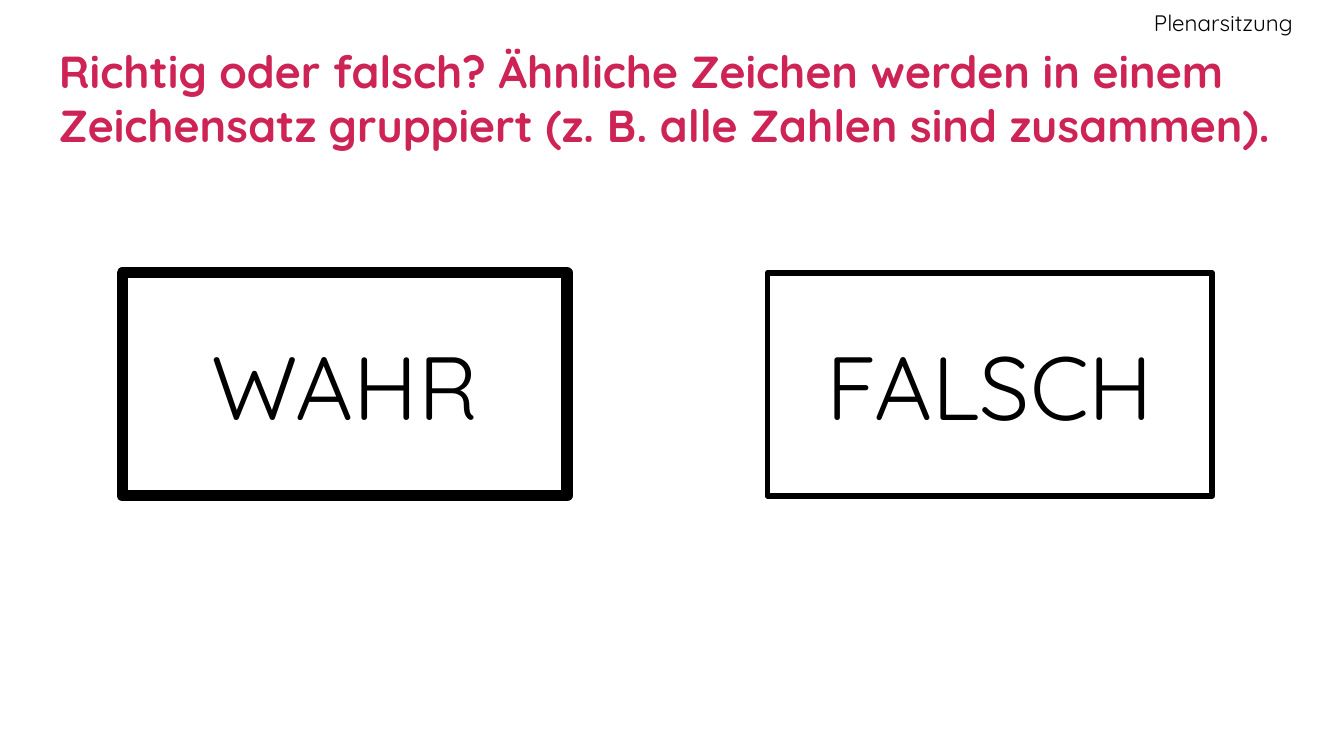
import pptx
import pptx.dml.color
import pptx.enum.shapes
import pptx.enum.text
import pptx.oxml.ns
import pptx.util
from lxml import etree

Pt = pptx.util.Pt
ALIGN = pptx.enum.text.PP_ALIGN
FONT = "Quicksand"
BLACK = "000000"
WHITE = "FFFFFF"
CRIMSON = "CD2355"

ANSWER_TOP, ANSWER_WIDTH, ANSWER_HEIGHT = 146.2, 238.3, 119.5
FIRST_ANSWER_LEFT, ANSWER_STEP = 65.5, 345.6
ANSWERS = [("WAHR", 6), ("FALSCH", 3)]


def color(hex_string):
    return pptx.dml.color.RGBColor.from_string(hex_string)


def write_text(shape, text, size, hex_color=BLACK, bold=False,
               align=ALIGN.LEFT, insets=(7.2, 7.2, 7.2, 7.2)):
    """Fill a shape with one middle-anchored paragraph; insets run left, top, right, bottom."""
    frame = shape.text_frame
    frame.word_wrap = True
    frame.vertical_anchor = pptx.enum.text.MSO_ANCHOR.MIDDLE
    (frame.margin_left, frame.margin_top,
     frame.margin_right, frame.margin_bottom) = map(Pt, insets)
    paragraph = frame.paragraphs[0]
    paragraph.alignment = align
    run = paragraph.add_run()
    run.text = text
    run.font.name = FONT
    run.font.size = Pt(size)
    run.font.bold = bold
    run.font.color.rgb = color(hex_color)


def add_label(slide, left, top, width, height, text, **text_format):
    box = slide.shapes.add_textbox(Pt(left), Pt(top), Pt(width), Pt(height))
    write_text(box, text, **text_format)


def add_answer(slide, left, text, line_width):
    """Add an answer box with rounded outline corners."""
    shape = slide.shapes.add_shape(
        pptx.enum.shapes.MSO_SHAPE.RECTANGLE,
        Pt(left), Pt(ANSWER_TOP), Pt(ANSWER_WIDTH), Pt(ANSWER_HEIGHT))
    shape.shadow.inherit = False
    shape.fill.solid()
    shape.fill.fore_color.rgb = color(WHITE)
    shape.line.color.rgb = color(BLACK)
    shape.line.width = Pt(line_width)
    outline = shape._element.spPr.find(pptx.oxml.ns.qn("a:ln"))
    etree.SubElement(outline, pptx.oxml.ns.qn("a:round"))
    write_text(shape, text, size=48, align=ALIGN.CENTER, insets=(3.6,) * 4)


def main():
    presentation = pptx.Presentation()
    presentation.slide_width = Pt(720)
    presentation.slide_height = Pt(405)
    slide = presentation.slides.add_slide(presentation.slide_layouts[6])

    add_label(slide, 24.5, 24.5, 671, 55.4,
              "Richtig oder falsch? Ähnliche Zeichen werden in einem "
              "Zeichensatz gruppiert (z. B. alle Zahlen sind zusammen).",
              size=24, hex_color=CRIMSON, bold=True)
    add_label(slide, 538.6, 0, 154, 24.5, "Plenarsitzung",
              size=12, align=ALIGN.RIGHT, insets=(7.2, 7.2, 0, 7.2))
    for index, (text, line_width) in enumerate(ANSWERS):
        add_answer(slide, FIRST_ANSWER_LEFT + index * ANSWER_STEP, text, line_width)

    presentation.save("out.pptx")


if __name__ == "__main__":
    main()
